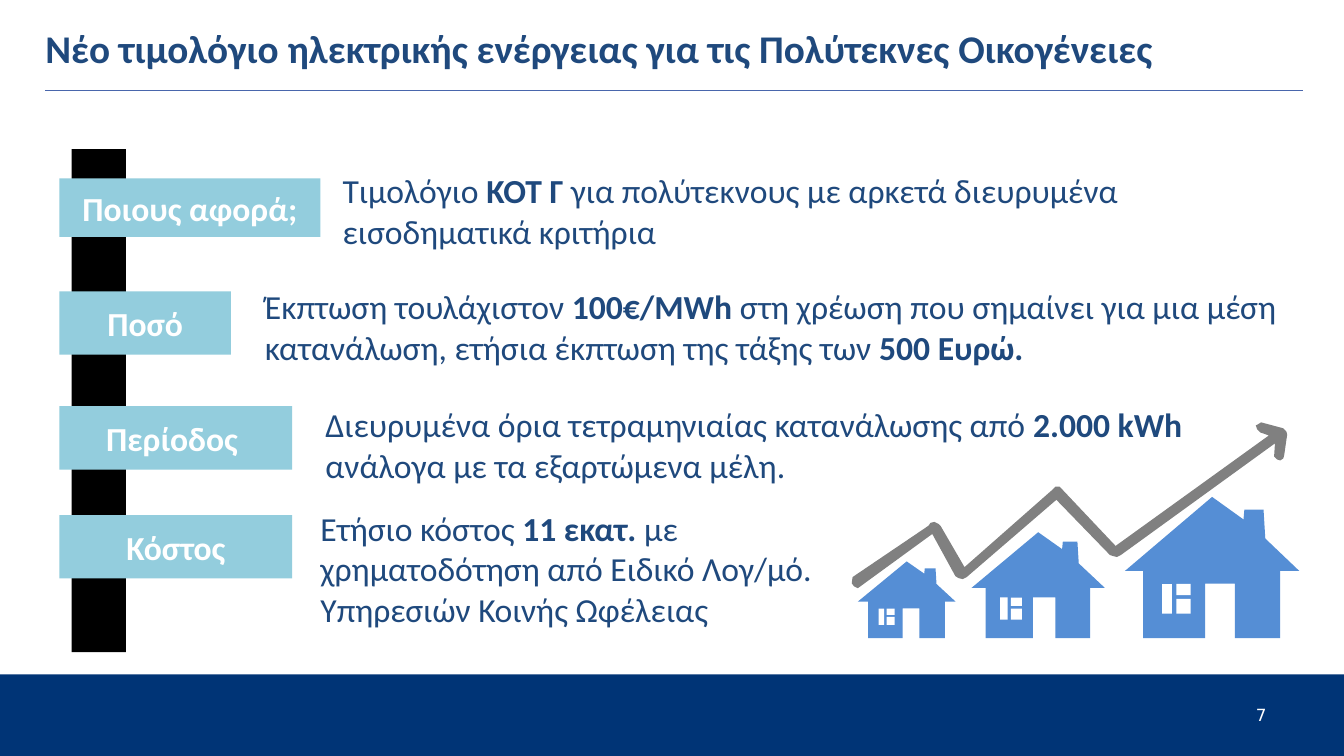
from dataclasses import dataclass

from pptx import Presentation
from pptx.dml.color import RGBColor
from pptx.enum.shapes import MSO_CONNECTOR, MSO_SHAPE
from pptx.enum.text import MSO_ANCHOR, MSO_AUTO_SIZE, PP_ALIGN
from pptx.oxml.ns import qn
from pptx.shapes.autoshape import Shape
from pptx.shapes.shapetree import GroupShapes, SlideShapes
from pptx.slide import Slide
from pptx.text.text import TextFrame
from pptx.util import Inches, Pt

COLUMNS, ROWS = 160, 90
SLIDE_WIDTH, SLIDE_HEIGHT = Inches(13.33), Inches(7.5)


@dataclass(frozen=True)
class Theme:
    navy: str = "003476"
    text: str = "1F497D"
    rule: str = "4966AC"
    label: str = "93CDDD"
    house: str = "558ED5"
    arrow: str = "808080"
    white: str = "FFFFFF"
    black: str = "000000"
    font: str = "Calibri"
    number_font: str = "DejaVu Sans"
    title_size: int = 28
    body_size: int = 24
    number_size: int = 12


@dataclass(frozen=True)
class Area:
    column: float
    row: float
    columns: float
    rows: float

    def emu(self) -> tuple[int, int, int, int]:
        return (
            round(self.column * SLIDE_WIDTH / COLUMNS),
            round(self.row * SLIDE_HEIGHT / ROWS),
            round(self.columns * SLIDE_WIDTH / COLUMNS),
            round(self.rows * SLIDE_HEIGHT / ROWS),
        )

    def portion(self, left: float, top: float, width: float, height: float) -> "Area":
        return Area(
            self.column + self.columns * left / 100,
            self.row + self.rows * top / 100,
            self.columns * width / 100,
            self.rows * height / 100,
        )


@dataclass(frozen=True)
class Topic:
    label: str
    label_area: Area
    runs: tuple[str, ...]
    text_area: Area


THEME = Theme()
LABEL_LEFT = 7.08

TOPICS = (
    Topic("Ποιους αφορά;", Area(LABEL_LEFT, 21.24, 31.08, 6.96),
          ("Τιμολόγιο ", "ΚΟΤ Γ ",
           "για πολύτεκνους με αρκετά διευρυμένα εισοδηματικά κριτήρια"),
          Area(39.6, 19.68, 117.24, 10.92)),
    Topic("Ποσό", Area(LABEL_LEFT, 34.68, 20.4, 7.56),
          ("Έκπτωση τουλάχιστον ", "100€/MWh ",
           "στη χρέωση που σημαίνει για μια μέση κατανάλωση, "
           "ετήσια έκπτωση της τάξης των ", "500 Ευρώ."),
          Area(30.36, 33.48, 122.88, 10.92)),
    Topic("Περίοδος ", Area(LABEL_LEFT, 48.36, 27.72, 7.56),
          ("Διευρυμένα όρια τετραμηνιαίας κατανάλωσης από ", "2.000 kWh ",
           "ανάλογα με τα εξαρτώμενα μέλη."),
          Area(37.56, 47.52, 115.44, 10.92)),
    Topic("Κόστος", Area(LABEL_LEFT, 61.32, 27.72, 7.56),
          ("Ετήσιο κόστος ", "11 εκατ. ",
           "με χρηματοδότηση από Ειδικό Λογ/μό. Υπηρεσιών Κοινής Ωφέλειας"),
          Area(36.96, 59.88, 63.84, 15.72)),
)

HOUSES = (
    Area(102.12, 66.84, 11.64, 9.12),
    Area(115.68, 63.36, 15.84, 12.6),
    Area(133.92, 59.16, 20.76, 16.8),
)
HOUSE_OUTLINE = (
    (50, 0), (68, 16), (68.5, 9), (79.5, 9), (80.5, 29.5), (100, 52.5),
    (89, 52.5), (89, 100), (63, 100), (63, 61.5), (46, 61.5), (46, 100),
    (10.5, 100), (10.5, 52.5), (0, 52.5),
)
WINDOW_PANES = ((21.3, 61.7, 5.7, 21), (29.5, 61.7, 8.2, 8), (29.5, 72.2, 8.2, 10.5))

ARROW_AREA = Area(101.4, 50.28, 51.84, 19.75)
ARROW_OUTLINE = (
    (94, 0), (99.1, 3.6), (99.8, 5.5), (100, 7.3), (99.3, 20), (99.1, 21.8),
    (98.4, 23), (97.7, 22.4), (97, 20.6), (97.2, 12.7), (61.8, 80),
    (60.9, 81.2), (60, 80.6), (59.3, 80), (47, 46.7), (26.4, 93.3),
    (25.5, 94.5), (24.5, 93.9), (23.8, 92.7), (18.5, 67.3), (1.4, 100),
    (0.5, 98.8), (0, 97), (0.2, 93.3), (17.6, 62.4), (18.1, 60.6), (19, 60),
    (19.9, 61.2), (20.4, 62.4), (25.9, 87.3), (46.1, 40.6), (46.8, 38.8),
    (47.7, 38.8), (48.4, 40.6), (60.6, 74.5), (95.8, 7.9), (93.8, 6.1),
    (93.1, 4.2), (92.8, 1.8), (93.3, 1.2),
)


def write(frame: TextFrame, *runs: str, size: int = THEME.body_size,
          color: str = THEME.text, font: str = THEME.font, bold: bool = False,
          align: PP_ALIGN = PP_ALIGN.LEFT, anchor: MSO_ANCHOR = MSO_ANCHOR.TOP,
          inset: tuple[float, float] = (0.1, 0.05), spacing: float = 1.0,
          fit: MSO_AUTO_SIZE = MSO_AUTO_SIZE.NONE) -> None:
    frame.word_wrap = True
    frame.auto_size = fit
    frame.vertical_anchor = anchor
    frame.margin_left = frame.margin_right = Inches(inset[0])
    frame.margin_top = frame.margin_bottom = Inches(inset[1])
    paragraph = frame.paragraphs[0]
    paragraph.alignment = align
    paragraph.line_spacing = spacing
    for index, text in enumerate(runs):
        run = paragraph.add_run()
        run.text = text
        run.font.name = font
        run.font.size = Pt(size)
        run.font.bold = bold or index % 2 == 1
        run.font.color.rgb = RGBColor.from_string(color)


def paint(shape: Shape, color: str) -> Shape:
    shape.shadow.inherit = False
    shape.fill.solid()
    shape.fill.fore_color.rgb = RGBColor.from_string(color)
    shape.line.fill.background()
    return shape


def draw_rectangle(shapes: SlideShapes | GroupShapes, area: Area, color: str) -> Shape:
    return paint(shapes.add_shape(MSO_SHAPE.RECTANGLE, *area.emu()), color)


def draw_outline(shapes: GroupShapes, area: Area,
                 outline: tuple[tuple[float, float], ...], color: str) -> None:
    left, top, width, height = area.emu()
    points = [(round(left + width * x / 100), round(top + height * y / 100))
              for x, y in outline]
    builder = shapes.build_freeform(*points[0], scale=1.0)
    builder.add_line_segments(points[1:], close=True)
    paint(builder.convert_to_shape(), color)


def draw_rule(slide: Slide, area: Area) -> None:
    left, top, width, height = area.emu()
    rule = slide.shapes.add_connector(
        MSO_CONNECTOR.STRAIGHT, left, top, left + width, top + height)
    rule.line.color.rgb = RGBColor.from_string(THEME.rule)
    rule.line.width = Pt(0.96)
    properties = rule.element.spPr
    properties.append(properties.makeelement(qn("a:effectLst"), {}))


def draw_houses(slide: Slide) -> None:
    shapes = slide.shapes.add_group_shape().shapes
    draw_outline(shapes, ARROW_AREA, ARROW_OUTLINE, THEME.arrow)
    for house in HOUSES:
        draw_outline(shapes, house, HOUSE_OUTLINE, THEME.house)
        for pane in WINDOW_PANES:
            draw_rectangle(shapes, house.portion(*pane), THEME.white)


def draw_topic(slide: Slide, topic: Topic) -> None:
    label = draw_rectangle(slide.shapes, topic.label_area, THEME.label)
    write(label.text_frame, topic.label, color=THEME.white, bold=True,
          align=PP_ALIGN.CENTER, anchor=MSO_ANCHOR.MIDDLE, inset=(0.1, 0.1))
    description = slide.shapes.add_textbox(*topic.text_area.emu())
    write(description.text_frame, *topic.runs, fit=MSO_AUTO_SIZE.SHAPE_TO_FIT_TEXT)


def main() -> None:
    presentation = Presentation()
    presentation.slide_width, presentation.slide_height = SLIDE_WIDTH, SLIDE_HEIGHT
    slide = presentation.slides.add_slide(presentation.slide_layouts[5])
    draw_rectangle(slide.shapes, Area(0, 80.28, COLUMNS, ROWS - 80.28), THEME.navy)
    draw_rule(slide, Area(5.4, 10.8, 149.76, 0))
    title = slide.shapes.title
    title.left, title.top, title.width, title.height = Area(5.4, 2.16, 149.28, 6.96).emu()
    write(title.text_frame,
          "Νέο τιμολόγιο ηλεκτρικής ενέργειας για τις Πολύτεκνες Οικογένειες",
          size=THEME.title_size, bold=True, anchor=MSO_ANCHOR.MIDDLE, inset=(0, 0))
    draw_houses(slide)
    draw_rectangle(slide.shapes, Area(8.52, 17.76, 6.48, 59.88), THEME.black)
    for topic in TOPICS:
        draw_topic(slide, topic)
    number = slide.shapes.add_textbox(*Area(149.52, 84.24, 5.04, 1.68).emu())
    write(number.text_frame, "7", size=THEME.number_size, color=THEME.white,
          font=THEME.number_font, inset=(0, 0), spacing=0.87,
          fit=MSO_AUTO_SIZE.SHAPE_TO_FIT_TEXT)
    presentation.save("out.pptx")


if __name__ == "__main__":
    main()
